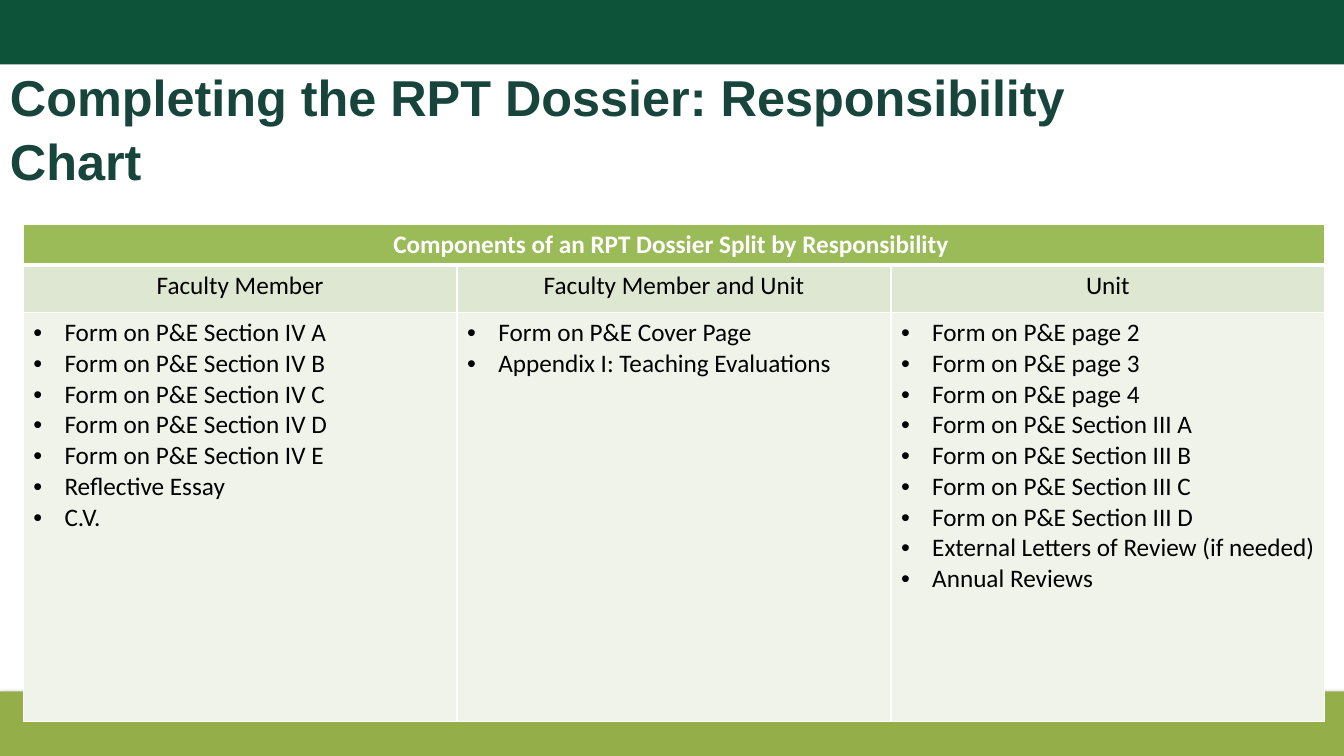
"""Build the RPT dossier responsibility chart slide."""
from lxml import etree
from pptx import Presentation
from pptx import oxml
from pptx import util as u
from pptx.dml.color import RGBColor
from pptx.enum import shapes, text
from pptx.oxml import ns

TITLE = "Completing the RPT Dossier: Responsibility Chart"
CAPTION = "Components of an RPT Dossier Split by Responsibility "
RESPONSIBILITIES = {
    "Faculty Member": [
        *(f"Form on P&E Section IV {section}" for section in "ABCDE"),
        "Reflective Essay",
        "C.V.",
    ],
    "Faculty Member and Unit": [
        "Form on P&E Cover Page",
        "Appendix I: Teaching Evaluations",
    ],
    "Unit": [
        *(f"Form on P&E page {page}" for page in (2, 3, 4)),
        *(f"Form on P&E Section III {section}" for section in "ABCD"),
        "External Letters of Review (if needed)",
        "Annual Reviews",
    ],
}
THEME = {
    "top_band": "0C533A", "bottom_band": "94AE4A", "border": "FFFFFF",
    "caption": "9BBB59", "heading": "DEE7D1", "body": "EFF3EA",
    "title_type": {"name": "Arial", "size": u.Pt(36), "bold": True, "color": "18453B"},
    "caption_type": {"name": "Calibri", "size": u.Pt(18), "bold": True, "color": "FFFFFF"},
    "body_type": {"name": "Calibri", "size": u.Pt(18), "bold": False, "color": "000000"},
}
WIDTH, HEIGHT, BAND = 13.33, 7.5, 0.64
TABLE = (0.23, 2.23, 12.91, 4.93)
ROWS = (0.4, 0.47, 4.06)
BULLET_INDENT = u.Inches(0.31)
SHADOW = (
    f'<a:effectLst {ns.nsdecls("a")}><a:outerShdw blurRad="39370" dist="22860" dir="5400000">'
    '<a:srgbClr val="000000"><a:alpha val="35000"/></a:srgbClr>'
    "</a:outerShdw></a:effectLst>"
)


def paint(fill, color):
    fill.solid()
    fill.fore_color.rgb = RGBColor.from_string(color)


def set_type(font, values):
    for key, value in values.items():
        if key == "color":
            font.color.rgb = RGBColor.from_string(value)
        else:
            setattr(font, key, value)


def add_band(slide, top, color):
    band = slide.shapes.add_shape(
        shapes.MSO_SHAPE.RECTANGLE, 0, u.Inches(top), u.Inches(WIDTH), u.Inches(BAND))
    band.shadow.inherit = False
    paint(band.fill, color)
    band.line.fill.background()
    return band


def add_title(slide):
    title = slide.shapes.add_textbox(0, u.Inches(0.58), u.Inches(11.5), u.Inches(1.43))
    title.text_frame.word_wrap = True
    heading = title.text_frame.paragraphs[0]
    heading.line_spacing = 1.05
    heading.text = TITLE
    set_type(heading.runs[0].font, THEME["title_type"])


def set_borders(cell, top, bottom):
    properties = cell._tc.get_or_add_tcPr()
    weights = {"lnL": 1, "lnR": 1, "lnT": top, "lnB": bottom}
    for position, (side, points) in enumerate(weights.items()):
        properties.insert(position, oxml.parse_xml(
            f'<a:{side} {ns.nsdecls("a")} w="{u.Pt(points)}"><a:solidFill>'
            f'<a:srgbClr val="{THEME["border"]}"/></a:solidFill></a:{side}>'))


def add_bullet(paragraph):
    properties = paragraph._p.get_or_add_pPr()
    properties.set("marL", str(BULLET_INDENT))
    properties.set("indent", str(-BULLET_INDENT))
    etree.SubElement(properties, ns.qn("a:buFont")).set("typeface", "Arial")
    etree.SubElement(properties, ns.qn("a:buChar")).set("char", "•")


def fill_cell(cell, lines, color, type_values, bulleted=False):
    paint(cell.fill, color)
    frame = cell.text_frame
    for index, line in enumerate(lines):
        paragraph = frame.add_paragraph() if index else frame.paragraphs[0]
        if bulleted:
            add_bullet(paragraph)
        else:
            paragraph.alignment = text.PP_ALIGN.CENTER
        paragraph.text = line
        set_type(paragraph.runs[0].font, type_values)


def add_responsibility_table(slide):
    table = slide.shapes.add_table(
        len(ROWS), len(RESPONSIBILITIES), *map(u.Inches, TABLE)).table
    for row, height in zip(table.rows, ROWS):
        row.height = u.Inches(height)
    for column, (owner, documents) in enumerate(RESPONSIBILITIES.items()):
        caption, heading, body = (table.cell(row, column) for row in range(len(ROWS)))
        paint(caption.fill, THEME["caption"])
        fill_cell(heading, [owner], THEME["heading"], THEME["body_type"])
        fill_cell(body, documents, THEME["body"], THEME["body_type"], bulleted=True)
        set_borders(caption, 1, 3)
        set_borders(heading, 3, 1)
        set_borders(body, 1, 1)
    table.cell(0, 0).merge(table.cell(0, len(RESPONSIBILITIES) - 1))
    fill_cell(table.cell(0, 0), [CAPTION], THEME["caption"], THEME["caption_type"])


def main():
    deck = Presentation()
    deck.slide_width, deck.slide_height = u.Inches(WIDTH), u.Inches(HEIGHT)
    slide = deck.slides.add_slide(deck.slide_layouts[6])
    bottom_band = add_band(slide, HEIGHT - BAND, THEME["bottom_band"])
    effects = bottom_band._element.spPr
    effects.replace(effects.find(ns.qn("a:effectLst")), oxml.parse_xml(SHADOW))
    add_band(slide, 0, THEME["top_band"])
    add_title(slide)
    add_responsibility_table(slide)
    deck.save("out.pptx")


if __name__ == "__main__":
    main()
